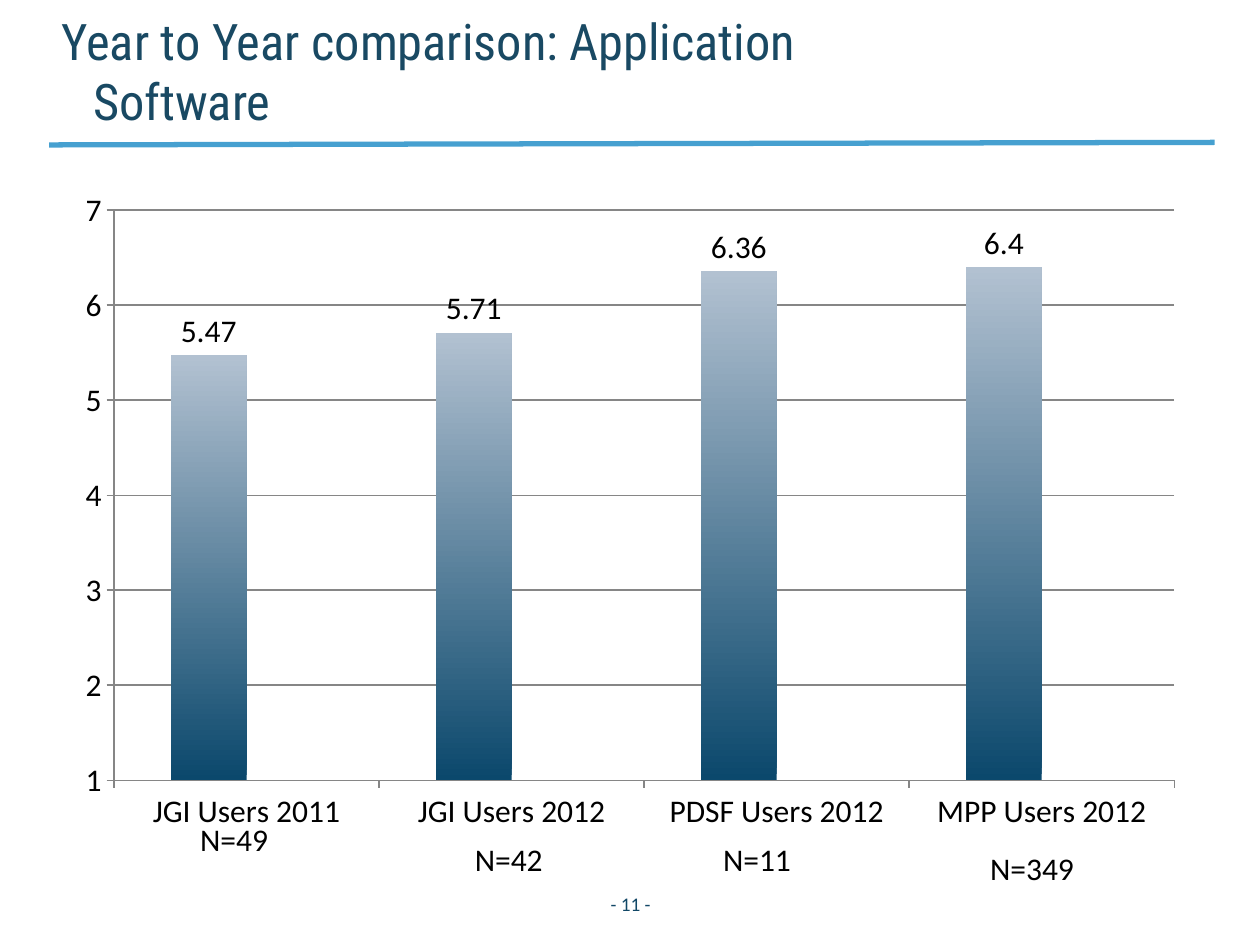
from dataclasses import dataclass

from lxml import etree
from pptx import Presentation
from pptx.chart.data import CategoryChartData
from pptx.dml.color import RGBColor
from pptx.enum.chart import XL_CHART_TYPE, XL_LABEL_POSITION, XL_TICK_MARK
from pptx.enum.shapes import MSO_CONNECTOR
from pptx.enum.text import MSO_ANCHOR, MSO_AUTO_SIZE, PP_ALIGN
from pptx.oxml.ns import qn
from pptx.util import Inches, Pt

COLUMNS = XL_CHART_TYPE.COLUMN_CLUSTERED
OUTSIDE_END = XL_LABEL_POSITION.OUTSIDE_END
TICK_OUT, TICK_NONE = XL_TICK_MARK.OUTSIDE, XL_TICK_MARK.NONE
STRAIGHT = MSO_CONNECTOR.STRAIGHT
TOP, MIDDLE, BOTTOM = MSO_ANCHOR.TOP, MSO_ANCHOR.MIDDLE, MSO_ANCHOR.BOTTOM
LEFT, CENTER = PP_ALIGN.LEFT, PP_ALIGN.CENTER
FIT_SHAPE, NO_FIT = MSO_AUTO_SIZE.SHAPE_TO_FIT_TEXT, MSO_AUTO_SIZE.NONE


@dataclass(frozen=True)
class Theme:
    title_font: str = "Roboto Condensed"
    body_font: str = "Calibri"
    title_size: float = 28.8
    body_size: float = 18
    footer_size: float = 11
    title: str = "194963"
    text: str = "000000"
    footer: str = "114766"
    rule: str = "46A0D0"
    grid: str = "868686"
    bar_bottom: str = "0B486C"
    bar_top: str = "B2C1D1"
    second_series: str = "FCD235"


def rgb(value):
    return RGBColor.from_string(value)


class SlideBuilder:
    def __init__(self, slide, theme):
        self.slide = slide
        self.theme = theme

    def style(self, font, size, color, name):
        font.size, font.name = Pt(size), name
        font.color.rgb = rgb(color)

    def rule(self, x1, y1, x2, y2):
        line = self.slide.shapes.add_connector(
            STRAIGHT, Inches(x1), Inches(y1), Inches(x2), Inches(y2))
        line.line.color.rgb = rgb(self.theme.rule)
        line.line.width = Pt(3)
        etree.SubElement(line._element.spPr, qn("a:effectLst"))

    def text(self, text, box, size, color, font, align=LEFT, anchor=TOP, wrap=True):
        sp = self.slide.shapes.add_textbox(*map(Inches, box))
        tf = sp.text_frame
        tf.word_wrap = wrap
        tf.auto_size = NO_FIT if wrap else FIT_SHAPE
        tf.vertical_anchor = anchor
        tf.text = text
        p = tf.paragraphs[0]
        p.alignment = align
        self.style(p.runs[0].font, size, color, font)
        return tf

    def title(self, text, box):
        t = self.theme
        tf = self.text(text, box, t.title_size, t.title, t.title_font, anchor=BOTTOM)
        tf.margin_top = tf.margin_bottom = 0
        pPr = tf.paragraphs[0]._p.get_or_add_pPr()
        pPr.set("marL", str(Inches(0.25)))
        pPr.set("indent", str(-Inches(0.25)))

    def sample_size(self, count, left, top):
        t = self.theme
        width = 0.45 + 0.13 * len(str(count)) + 0.04
        self.text(f"N={count}", (left, top, width, 0.4),
                  t.body_size, t.text, t.body_font, wrap=False)

    def column_chart(self, categories, series, box):
        t = self.theme
        data = CategoryChartData()
        data.categories = categories
        for name, values in series.items():
            data.add_series(name, values)
        chart = self.slide.shapes.add_chart(COLUMNS, *map(Inches, box), data).chart
        chart.has_legend = chart.has_title = False
        self.style(chart.font, t.body_size, t.text, t.body_font)

        plot = chart.plots[0]
        plot.gap_width, plot.overlap = 150, 0
        plot.vary_by_categories = False
        scores, spare = plot.series
        self.gradient(scores.format.fill)
        spare.format.fill.solid()
        spare.format.fill.fore_color.rgb = rgb(t.second_series)
        labels = scores.data_labels
        labels.show_value = True
        labels.position = OUTSIDE_END
        self.style(labels.font, t.body_size, t.text, t.body_font)

        values = chart.value_axis
        values.minimum_scale, values.maximum_scale, values.major_unit = 1, 7, 1
        values.has_major_gridlines = True
        lines = [values.major_gridlines.format.line]
        for axis in (chart.category_axis, values):
            axis.major_tick_mark, axis.minor_tick_mark = TICK_OUT, TICK_NONE
            lines.append(axis.format.line)
        for line in lines:
            line.color.rgb = rgb(t.grid)
            line.width = Pt(0.75)
        self.place_plot(chart, x=0.045, y=0.047, w=0.935, h=0.857)

    def gradient(self, fill):
        """Fade the bars from dark at the foot to light at the top."""
        fill.gradient()
        fill.gradient_angle = 90
        colors = (self.theme.bar_bottom, self.theme.bar_top)
        for position, (stop, color) in enumerate(zip(fill.gradient_stops, colors)):
            stop.position = position
            stop.color.rgb = rgb(color)

    def place_plot(self, chart, **fractions):
        """Fix the inner plot area as fractions of the chart's frame."""
        area = chart._chartSpace.chart.plotArea
        for old in area.findall(qn("c:layout")):
            area.remove(old)
        layout = etree.Element(qn("c:layout"))
        area.insert(0, layout)
        manual = etree.SubElement(layout, qn("c:manualLayout"))
        settings = {"layoutTarget": "inner", "xMode": "edge", "yMode": "edge", **fractions}
        for tag, value in settings.items():
            etree.SubElement(manual, qn(f"c:{tag}")).set("val", str(value))


def main():
    prs = Presentation()
    prs.slide_width, prs.slide_height = Inches(10), Inches(7.5)
    theme = Theme()
    builder = SlideBuilder(prs.slides.add_slide(prs.slide_layouts[6]), theme)

    builder.rule(0.39, 1.15, 9.64, 1.13)
    builder.title("Year to Year comparison: Application Software", (0.39, 0.2, 7.46, 0.84))
    builder.column_chart(
        ["JGI Users 2011", "JGI Users 2012", "PDSF Users 2012", "MPP Users 2012"],
        {"Series 1": (5.47, 5.71, 6.36, 6.4), "Series 2": (None,) * 4},
        (0.5, 1.42, 9, 5.28))
    builder.text("- 11 -", (4.5, 6.97, 1.01, 0.4), theme.footer_size, theme.footer,
                 theme.body_font, align=CENTER, anchor=MIDDLE)
    for count, left, top in ((49, 1.49, 6.46), (42, 3.67, 6.62),
                             (11, 5.64, 6.62), (349, 7.76, 6.69)):
        builder.sample_size(count, left, top)

    prs.save("out.pptx")


if __name__ == "__main__":
    main()
